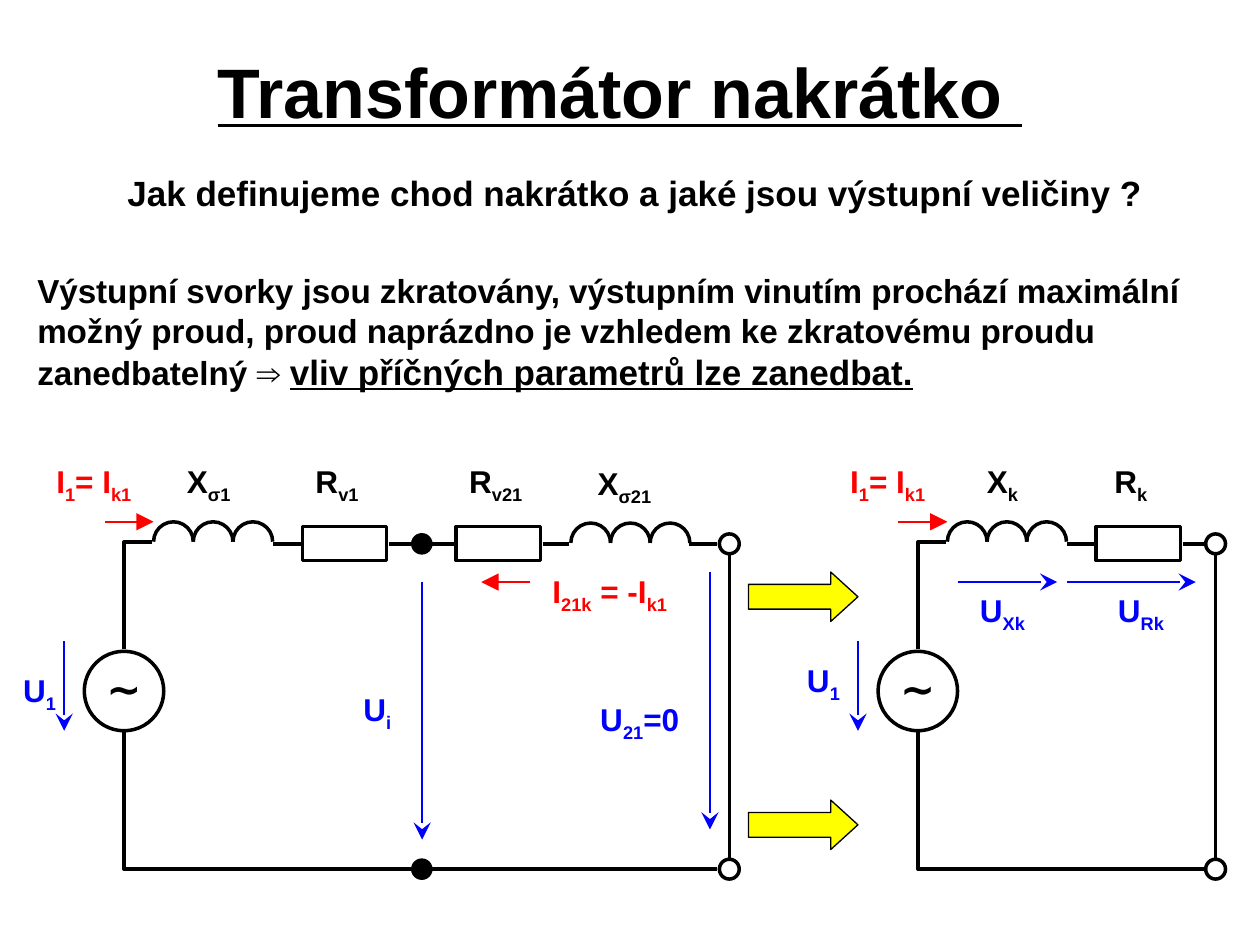
from pptx import Presentation
from pptx.dml.color import RGBColor
from pptx.enum.shapes import MSO_CONNECTOR, MSO_SHAPE
from pptx.enum.text import MSO_ANCHOR, PP_ALIGN
from pptx.oxml.ns import qn
from pptx.util import Pt
from lxml import etree

STRAIGHT, ELBOW = MSO_CONNECTOR.STRAIGHT, MSO_CONNECTOR.ELBOW
OVAL, RECTANGLE, ARC = MSO_SHAPE.OVAL, MSO_SHAPE.RECTANGLE, MSO_SHAPE.ARC
RIGHT_ARROW = MSO_SHAPE.RIGHT_ARROW
LEFT, CENTER, RIGHT = PP_ALIGN.LEFT, PP_ALIGN.CENTER, PP_ALIGN.RIGHT
TOP, MIDDLE = MSO_ANCHOR.TOP, MSO_ANCHOR.MIDDLE

COLORS = {"ink": "000000", "current": "FF0000", "voltage": "0000FF", "arrow": "FFFF00"}
NODE = 11.34
TURN = 22.68
HALF_CIRCLE = 108
WIRE_Y = 46.6
BOTTOM_Y = 232.5


def color(name):
    """Return the named colour."""
    return RGBColor.from_string(COLORS[name])


def add_text(slide, left, top, width, height, size, align=CENTER, anchor=TOP,
             ink="ink", inset=(0, 0)):
    """Add an empty bold text box and return its paragraph."""
    frame = slide.shapes.add_textbox(Pt(left), Pt(top), Pt(width), Pt(height)).text_frame
    frame.word_wrap = True
    frame.vertical_anchor = anchor
    frame.margin_left = frame.margin_right = Pt(inset[0])
    frame.margin_top = frame.margin_bottom = Pt(inset[1])
    paragraph = frame.paragraphs[0]
    paragraph.alignment = align
    font = paragraph.font
    font.name, font.size, font.bold = "Arial", Pt(size), True
    font.color.rgb = color(ink)
    return paragraph


def add_label(slide, left, top, width, text, ink="ink", align=CENTER):
    """Add a symbol whose every second part, split at bars, is a subscript."""
    paragraph = add_text(slide, left, top, width, 21.6, 18, align, ink=ink)
    for index, part in enumerate(text.split("|")):
        run = paragraph.add_run()
        run.text = part
        if index % 2:
            run._r.get_or_add_rPr().set("baseline", "-25000")


def add_shape(slide, kind, left, top, width, height, fill=None, weight=2):
    """Add a black-outlined shape with an optional fill."""
    shape = slide.shapes.add_shape(kind, Pt(left), Pt(top), Pt(width), Pt(height))
    shape.shadow.inherit = False
    if fill:
        shape.fill.solid()
        shape.fill.fore_color.rgb = color(fill)
    else:
        shape.fill.background()
    shape.line.color.rgb = color("ink")
    shape.line.width = Pt(weight)
    return shape


def add_line(slide, start, end, ink="ink", weight=2, head=None, kind=STRAIGHT):
    """Add a connector with an optional arrowhead at its end."""
    line = slide.shapes.add_connector(kind, *[Pt(value) for value in (*start, *end)])
    line.line.color.rgb = color(ink)
    line.line.width = Pt(weight)
    if head:
        tail = etree.SubElement(line.line._get_or_add_ln(), qn("a:tailEnd"))
        for name, value in (("type", head), ("w", "lg"), ("len", "lg")):
            tail.set(name, value)
    etree.SubElement(line._element.spPr, qn("a:effectLst"))
    return line


def add_corner(slide, start, end):
    """Add a wire that runs vertically from start, then horizontally to end."""
    width, height = abs(end[1] - start[1]), end[0] - start[0]
    left = (start[0] + end[0] - width) / 2
    top = (start[1] + end[1] - height) / 2
    sides = (left, left + width)
    if end[1] > start[1]:
        sides = sides[::-1]
    line = add_line(slide, (sides[0], top), (sides[1], top + height), kind=ELBOW)
    properties = line._element.spPr
    properties.find(qn("a:xfrm")).set("rot", "16200000")
    properties.find(qn("a:prstGeom")).set("prst", "bentConnector2")


def add_coil(slide, left, top):
    """Draw a coil of three touching half circles."""
    for index in range(3):
        turn = add_shape(slide, ARC, left + index * TURN, top, TURN, TURN)
        turn.adjustments[0] = HALF_CIRCLE


def add_resistor(slide, left, top):
    """Draw a resistor box."""
    add_shape(slide, RECTANGLE, left, top, 48.2, 19.4)


def add_nodes(slide, left, top, fill=None):
    """Draw one node on the upper wire and one on the lower wire."""
    for y in (WIRE_Y, BOTTOM_Y):
        add_shape(slide, OVAL, left, top + y - NODE / 2, NODE, NODE, fill, 1 if fill else 2)


def add_output(slide, left, top):
    """Draw the output terminals and the short circuit between them."""
    add_nodes(slide, left, top)
    x = left + NODE / 2
    add_line(slide, (x, top + WIRE_Y + 6.5), (x, top + BOTTOM_Y - 6.5))


def add_input(slide, left, top, reactance, resistance, source_label):
    """Draw the source, the coil and the resistor with their symbols."""
    add_label(slide, left, top, 56.9, "I|1|= I|k1", "current")
    add_line(slide, (left + 34.6, top + 34), (left + 62.6, top + 34), "current", 1, "triangle")
    add_label(slide, left + source_label[0], top + source_label[1], 28.1, "U|1", "voltage")
    add_line(slide, (left + 11.5, top + 102.2), (left + 11.5, top + 153.4), "voltage", 1, "stealth")
    add_label(slide, left + 74.2, top, 39.6, reactance)
    add_label(slide, left + 147.6, top, 39.6, resistance)
    add_shape(slide, OVAL, left + 23, top + 108, 45.4, 45.4)
    add_text(slide, left + 28.8, top + 114.5, 33.8, 28.8, 24, anchor=MIDDLE).add_run().text = "∼"
    add_corner(slide, (left + 45.8, top + 106.6), (left + 61.9, top + 45.4))
    add_corner(slide, (left + 45.8, top + 154.1), (left + 209.8, top + BOTTOM_Y))
    add_coil(slide, left + 62.6, top + 34)
    add_resistor(slide, left + 147.6, top + 36.7)
    for start, end in ((131, 146.9), (197.3, 209.8)):
        add_line(slide, (left + start, top + WIRE_Y), (left + end, top + WIRE_Y))


def add_full_circuit(slide, left, top):
    """Draw the circuit with both windings."""
    add_input(slide, left, top, "X|σ1", "R|v1", (-16.6, 119.5))
    add_nodes(slide, left + 210.2, top, "ink")
    add_resistor(slide, left + 235.4, top + 36.7)
    add_coil(slide, left + 301, top + 34.7)
    for start, end in ((221.8, 234.7), (285.1, 300.2), (368.6, 384.5)):
        add_line(slide, (left + start, top + WIRE_Y), (left + end, top + WIRE_Y))
    add_line(slide, (left + 221.8, top + BOTTOM_Y), (left + 384.5, top + BOTTOM_Y))
    add_output(slide, left + 385.9, top)
    add_label(slide, left + 238.3, top, 39.6, "R|v21")
    add_label(slide, left + 311.8, top + 1, 39.6, "X|σ21")
    add_line(slide, (left + 277.9, top + 68.4), (left + 249.8, top + 68.4), "current", 1, "triangle")
    add_label(slide, left + 283.7, top + 62.6, 79.2, "I|21k| = -I|k1", "current")
    for x, y in ((216, 68.4), (380.5, 62.6)):
        add_line(slide, (left + x, top + y), (left + x, top + y + 147.2), "voltage", 1, "stealth")
    add_label(slide, left + 176.4, top + 130.3, 28.1, "U|i", "voltage")
    add_label(slide, left + 277.9, top + 136.1, 85, "U|21|=0", "voltage", RIGHT)


def add_reduced_circuit(slide, left, top):
    """Draw the simplified short-circuit diagram."""
    add_input(slide, left, top, "X|k", "R|k", (-22.3, 113.8))
    add_output(slide, left + 210.2, top)
    for start, end, x, text in ((68.4, 125.3, 74.2, "U|Xk"), (131, 204.5, 153.4, "U|Rk")):
        add_line(slide, (left + start, top + 68.4), (left + end, top + 68.4), "voltage", 1, "stealth")
        add_label(slide, left + x, top + 73.4, 39.6, text, "voltage")


def add_step_arrows(slide, left, top):
    """Draw the two arrows leading to the simplified circuit."""
    for y in (0, 130.3):
        arrow = add_shape(slide, RIGHT_ARROW, left, top + y, 62.6, 28.3, "arrow", 0.75)
        arrow.adjustments[1] = 0.55


def add_heading(slide):
    """Write the title, the question and the answer."""
    title = add_text(slide, 87.8, 20.2, 532.8, 62.6, 40, anchor=MIDDLE, inset=(7.2, 3.6))
    title.font.underline = True
    title.add_run().text = "Transformátor nakrátko "
    question = add_text(slide, 54, 94.3, 617.8, 31, 20, inset=(7.2, 3.6))
    question.add_run().text = "Jak definujeme chod nakrátko a jaké jsou výstupní veličiny ?"
    answer = add_text(slide, 14.2, 151, 691.9, 77, 19, LEFT, inset=(7.2, 3.6))
    answer.add_run().text = (
        "Výstupní svorky jsou zkratovány, výstupním vinutím prochází maximální možný proud, "
        "proud naprázdno je vzhledem ke zkratovému proudu zanedbatelný ⇒ ")
    conclusion = answer.add_run()
    conclusion.text = "vliv příčných parametrů lze zanedbat."
    conclusion.font.size = Pt(20)
    conclusion.font.underline = True


def main():
    """Build the slide and save it."""
    presentation = Presentation()
    presentation.slide_width, presentation.slide_height = Pt(720), Pt(540)
    slide = presentation.slides.add_slide(presentation.slide_layouts[6])
    add_heading(slide)
    add_full_circuit(slide, 25.2, 264.2)
    add_reduced_circuit(slide, 478.8, 264.2)
    add_step_arrows(slide, 427.7, 326.9)
    presentation.save("out.pptx")


if __name__ == "__main__":
    main()
